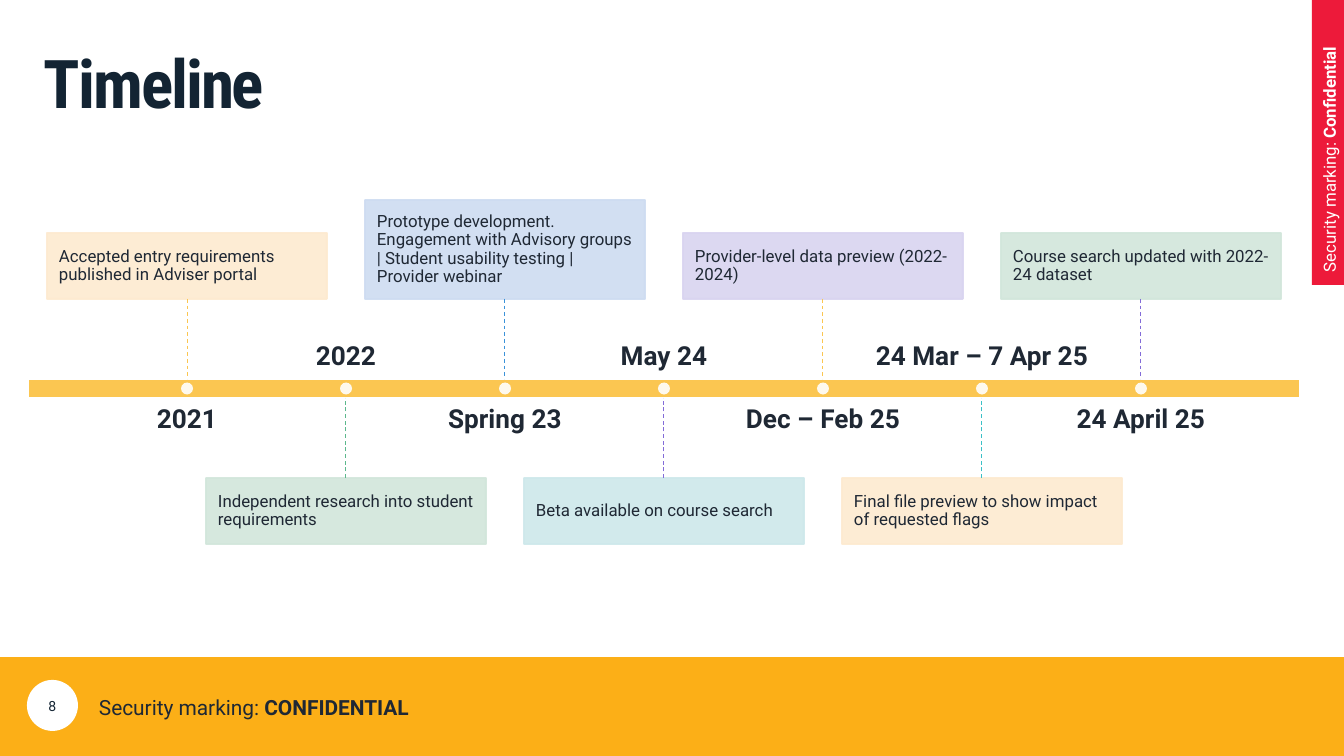
from lxml import etree
from pptx import Presentation
from pptx import util as u
from pptx.dml.color import RGBColor
from pptx.enum import dml, shapes, text
from pptx.oxml.ns import qn

WHITE = RGBColor(0xFF, 0xFF, 0xFF)
NAVY = RGBColor(0x13, 0x24, 0x33)
INK = RGBColor(0x1F, 0x28, 0x34)
AMBER = RGBColor(0xFC, 0xAF, 0x17)
RED = RGBColor(0xED, 0x1A, 0x3A)
YELLOW = RGBColor(0xFB, 0xC6, 0x51)
GREEN = RGBColor(0x5D, 0xB8, 0x8D)
BLUE = RGBColor(0x3B, 0x92, 0xD9)
PURPLE = RGBColor(0x83, 0x6C, 0xD8)
TEAL = RGBColor(0x3B, 0xC0, 0xC7)
PALE_AMBER = RGBColor(0xFD, 0xEA, 0xD0)
PALE_GREEN = RGBColor(0xD2, 0xE6, 0xDB)
PALE_BLUE = RGBColor(0xCE, 0xDC, 0xF1)
PALE_TEAL = RGBColor(0xCE, 0xE8, 0xEB)
PALE_PURPLE = RGBColor(0xD9, 0xD4, 0xF0)

WIDTH, HEIGHT = 1344, 756
RECT = shapes.MSO_SHAPE.RECTANGLE
OVAL = shapes.MSO_SHAPE.OVAL
TOP, MIDDLE, BOTTOM = text.MSO_ANCHOR.TOP, text.MSO_ANCHOR.MIDDLE, text.MSO_ANCHOR.BOTTOM
LEFT, CENTER = text.PP_ALIGN.LEFT, text.PP_ALIGN.CENTER

MILESTONES = [
    ("2021", "Accepted entry requirements published in Adviser portal", PALE_AMBER, YELLOW, 66),
    ("2022", "Independent research into student requirements", PALE_GREEN, GREEN, 66),
    ("Spring 23", "Prototype development. Engagement with Advisory groups | "
     "Student usability testing | Provider webinar", PALE_BLUE, BLUE, 99),
    ("May 24", "Beta available on course search", PALE_TEAL, PURPLE, 66),
    ("Dec – Feb 25", "Provider-level data preview (2022-2024)", PALE_PURPLE, YELLOW, 66),
    ("24 Mar – 7 Apr 25", "Final file preview to show impact of requested flags",
     PALE_AMBER, TEAL, 66),
    ("24 April 25", "Course search updated with 2022-24 dataset", PALE_GREEN, PURPLE, 66),
]


def px(n):
    """Turn pixels into EMU."""
    return u.Emu(round(n * 9144000 / WIDTH))


def set_alpha(fill_parent, percent):
    """Make the solid colour under an element partly transparent."""
    color = fill_parent.find(qn("a:solidFill"))[0]
    etree.SubElement(color, qn("a:alpha")).set("val", str(percent * 1000))


def add_block(s, kind, box, fill, line=None, alpha=None):
    """Add a filled shape with an optional outline and transparency."""
    sp = s.shapes.add_shape(kind, *map(px, box))
    sp.shadow.inherit = False
    sp.fill.solid()
    sp.fill.fore_color.rgb = fill
    if line is None:
        sp.line.fill.background()
    else:
        sp.line.color.rgb = line
        sp.line.width = u.Pt(1)
    if alpha:
        set_alpha(sp._element.spPr, alpha)
        if line is not None:
            set_alpha(sp._element.spPr.find(qn("a:ln")), alpha)
    return sp


def write(sp, parts, size, color, font="Roboto", align=LEFT, anchor=TOP,
          insets=(0, 0), spacing=None):
    """Write (wording, bold) parts as one paragraph in a shape."""
    tf = sp.text_frame
    tf.word_wrap = True
    tf.vertical_anchor = anchor
    tf.margin_left = tf.margin_right = px(insets[0])
    tf.margin_top = tf.margin_bottom = px(insets[1])
    p = tf.paragraphs[0]
    p.alignment = align
    p.line_spacing = spacing
    for wording, bold in parts:
        r = p.add_run()
        r.text = wording
        r.font.name = font
        r.font.size = u.Pt(size)
        r.font.bold = bold
        r.font.color.rgb = color
    return p


def add_label(s, box, parts, size, color, **style):
    """Add a text box holding one paragraph."""
    return write(s.shapes.add_textbox(*map(px, box)), parts, size, color, **style)


def add_footer(s, x, y, w, h):
    """Draw the footer band with page number and security marking."""
    add_block(s, RECT, (x, y, w, h), AMBER)
    badge = add_block(s, OVAL, (x + 27, y + 23, 51, 51), WHITE)
    write(badge, [("8", False)], 7.5, NAVY, align=CENTER, anchor=MIDDLE, insets=(8, 8))
    add_label(s, (x + 86, y + 36, 659, 34),
              [("Security marking: ", False), ("CONFIDENTIAL", True)],
              11.2, INK, anchor=MIDDLE, insets=(13, 7), spacing=0.7)


def add_side_tab(s, x, y, w, h):
    """Draw the upright security tab that fills the given box."""
    box = (x + (w - h) / 2, y + (h - w) / 2, h, w)
    sp = add_block(s, RECT, box, RED)
    sp.rotation = 270
    write(sp, [("Security marking: ", False), ("Confidential", True)],
          9, WHITE, insets=(13, 7))


def add_title(s, x, y, w, h):
    """Write the slide title with tight letter spacing."""
    p = add_label(s, (x, y, w, h), [("Timeline", True)], 36, NAVY,
                  font="Roboto Condensed", spacing=0.9)
    p.runs[0].font._element.set("spc", "-110")


def add_milestone(s, center, bar_top, bar_h, above, milestone):
    """Draw one card, its dashed stem, its dot and its date across the bar."""
    date, wording, fill, stem, card_h = milestone
    card_w, stem_h, dot, date_w, date_h, gap = 280, 80, 12, 254, 54, 8
    bar_bottom = bar_top + bar_h
    bar_edge = bar_top if above else bar_bottom
    card_edge = bar_top - stem_h if above else bar_bottom + stem_h
    card_top = card_edge - card_h if above else card_edge
    date_top = bar_bottom + gap if above else bar_top - gap - date_h

    card = add_block(s, RECT, (center - card_w / 2, card_top, card_w, card_h),
                     fill, line=fill, alpha=90)
    write(card, [(wording, False)], 9, INK, anchor=MIDDLE, insets=(12, 12), spacing=0.9)

    line = s.shapes.add_connector(shapes.MSO_CONNECTOR.STRAIGHT, px(center), px(card_edge),
                                  px(center), px(bar_edge))
    line.begin_connect(card, 2 if above else 0)
    line.line.color.rgb = stem
    line.line.width = u.Pt(0.5)
    line.line.dash_style = dml.MSO_LINE.DASH
    etree.SubElement(line._element.spPr, qn("a:effectLst"))

    add_block(s, OVAL, (center - dot / 2, bar_top + (bar_h - dot) / 2, dot, dot),
              WHITE, alpha=90)
    add_label(s, (center - date_w / 2, date_top, date_w, date_h), [(date, True)], 14, INK,
              align=CENTER, anchor=TOP if above else BOTTOM, spacing=0.9)


def add_timeline(s, x, y, w, h):
    """Draw the bar and its milestones, alternating above and below."""
    add_block(s, RECT, (x, y, w, h), YELLOW, line=WHITE)
    step = w / (len(MILESTONES) + 1)
    for i, milestone in enumerate(MILESTONES):
        center = round(x + step * (i + 1))
        add_milestone(s, center, y, h, i % 2 == 0, milestone)


def main():
    """Build and save the timeline slide."""
    prs = Presentation()
    prs.slide_width, prs.slide_height = px(WIDTH), px(HEIGHT)
    s = prs.slides.add_slide(prs.slide_layouts[6])
    add_footer(s, 0, 657, WIDTH, 99)
    add_side_tab(s, 1312, 0, 34, 285)
    add_title(s, 44, 51, 1230, 147)
    add_timeline(s, 28, 379, 1272, 19)
    prs.save("out.pptx")


if __name__ == "__main__":
    main()
